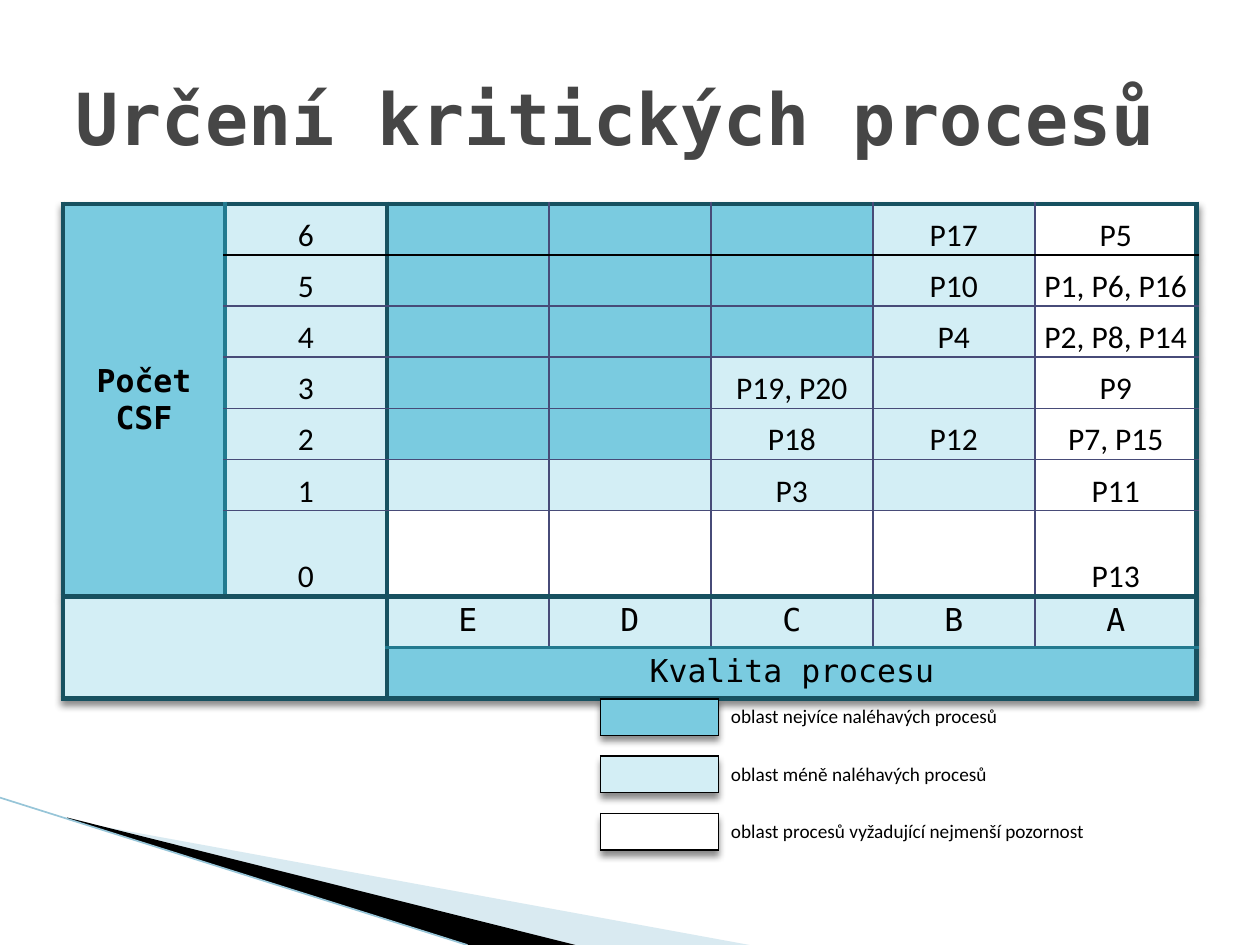
from lxml import etree
from pptx import Presentation
from pptx.dml.color import RGBColor
from pptx.enum.shapes import MSO_CONNECTOR
from pptx.enum.text import MSO_ANCHOR, MSO_AUTO_SIZE, PP_ALIGN
from pptx.oxml import parse_xml
from pptx.oxml.ns import nsdecls, qn
from pptx.util import Cm, Pt

STRAIGHT = MSO_CONNECTOR.STRAIGHT
TOP, MIDDLE, BOTTOM = MSO_ANCHOR.TOP, MSO_ANCHOR.MIDDLE, MSO_ANCHOR.BOTTOM
LEFT, CENTER = PP_ALIGN.LEFT, PP_ALIGN.CENTER
NO_AUTOFIT = MSO_AUTO_SIZE.NONE

BLACK = RGBColor(0x00, 0x00, 0x00)
WHITE = RGBColor(0xFF, 0xFF, 0xFF)
TITLE_GREY = RGBColor(0x46, 0x46, 0x46)
URGENT = RGBColor(0x7A, 0xCB, 0xE0)
LESS_URGENT = RGBColor(0xD3, 0xEE, 0xF5)
DARK_TEAL = RGBColor(0x17, 0x51, 0x60)
TEAL = RGBColor(0x22, 0x7A, 0x8F)
INDIGO = RGBColor(0x47, 0x4B, 0x78)
PALE_BLUE = RGBColor(0xA0, 0xCB, 0xDC)
EDGE_BLUE = RGBColor(0x97, 0xC5, 0xD8)

BODY_FONT, MONO_FONT = "Calibri", "DejaVu Sans Mono"
PLAIN_TABLE_STYLE = "{2D5ABB26-0587-4C30-8999-92F81FD0307C}"

# Border kinds: colour and width in points
FRAME, HEADER, GRID, THIN_BLACK = (DARK_TEAL, 3), (TEAL, 2.25), (INDIGO, 1), (BLACK, 1)

# Matrix: CSF count, urgency zone of each column E to A, processes in each column
ZONES = {"U": URGENT, "L": LESS_URGENT, "W": WHITE}
MATRIX = [
    ("6", "UUULW", ["", "", "", "P17", "P5"]),
    ("5", "UUULW", ["", "", "", "P10", "P1, P6, P16"]),
    ("4", "UUULW", ["", "", "", "P4", "P2, P8, P14"]),
    ("3", "UULLW", ["", "", "P19, P20", "", "P9"]),
    ("2", "UULLW", ["", "", "P18", "P12", "P7, P15"]),
    ("1", "LLLLW", ["", "", "P3", "", "P11"]),
    ("0", "WWWWW", ["", "", "", "", "P13"]),
]
ROW_EDGES = [FRAME, THIN_BLACK] + [GRID] * 5 + [FRAME, HEADER, FRAME]
COLUMN_EDGES = [FRAME, HEADER, FRAME] + [GRID] * 4 + [FRAME]

LEGEND = [
    (URGENT, "oblast nejvíce naléhavých procesů"),
    (LESS_URGENT, "oblast méně naléhavých procesů"),
    (WHITE, "oblast procesů vyžadující nejmenší pozornost"),
]


class SlideBuilder:
    """Holds the style and the current slide."""

    def __init__(self, slide):
        self.slide = slide
        self.shapes = slide.shapes

    def format_text(self, frame, size, font, color=BLACK, bold=False, align=LEFT):
        for paragraph in frame.paragraphs:
            paragraph.alignment = align
            for run in paragraph.runs:
                run.font.size = Pt(size)
                run.font.name = font
                run.font.bold = bold
                run.font.color.rgb = color

    def title(self, text, left, top, width, height):
        heading = self.shapes.title
        heading.left, heading.top = Cm(left), Cm(top)
        heading.width, heading.height = Cm(width), Cm(height)
        frame = heading.text_frame
        frame.text = text
        frame.word_wrap = True
        frame.auto_size = NO_AUTOFIT
        frame.vertical_anchor = MIDDLE
        self.format_text(frame, 41, MONO_FONT, TITLE_GREY, bold=True)

    def wedge(self, corners, color, opacity=100):
        points = [(Cm(x), Cm(y)) for x, y in corners]
        builder = self.shapes.build_freeform(*points[0])
        builder.add_line_segments(points[1:], close=True)
        wedge = builder.convert_to_shape()
        wedge.shadow.inherit = False
        wedge.fill.solid()
        wedge.fill.fore_color.rgb = color
        wedge.line.fill.background()
        if opacity < 100:
            tint = wedge.fill._xPr.find(".//" + qn("a:srgbClr"))
            etree.SubElement(tint, qn("a:alpha"), val=str(opacity * 1000))

    def line(self, start, end, color, width):
        edge = self.shapes.add_connector(STRAIGHT, *map(Cm, start + end))
        edge.line.color.rgb = color
        edge.line.width = Pt(width)
        etree.SubElement(edge._element.spPr, qn("a:effectLst"))

    def table(self, left, top, widths, heights):
        frame = self.shapes.add_table(len(heights), len(widths), Cm(left), Cm(top),
                                      Cm(sum(widths)), Cm(sum(heights)))
        table = frame.table
        table.first_row = table.horz_banding = False
        for column, width in zip(table.columns, widths):
            column.width = Cm(width)
        for row, height in zip(table.rows, heights):
            row.height = Cm(height)
        properties = table._tbl.tblPr
        properties.find(qn("a:tableStyleId")).text = PLAIN_TABLE_STYLE
        properties.insert(0, parse_xml(
            f'<a:effectLst {nsdecls("a")}><a:outerShdw blurRad="50800" dist="38100" '
            'dir="5400000" rotWithShape="0"><a:srgbClr val="000000">'
            '<a:alpha val="45000"/></a:srgbClr></a:outerShdw></a:effectLst>'))
        return table

    def cell(self, cell, text="", fill=None, anchor=TOP, size=18, font=BODY_FONT,
             bold=False, align=CENTER, tight=False):
        cell.vertical_anchor = anchor
        if fill is not None:
            cell.fill.solid()
            cell.fill.fore_color.rgb = fill
        if tight:
            cell.margin_left = cell.margin_right = cell.margin_top = Cm(0.03)
            cell.margin_bottom = 0
        if text:
            cell.text_frame.text = text
            self.format_text(cell.text_frame, size, font, bold=bold, align=align)
        else:
            etree.SubElement(cell.text_frame.paragraphs[0]._p, qn("a:endParaRPr"),
                             sz=str(size * 100))

    def borders(self, cell, left, right, top, bottom):
        properties = cell._tc.get_or_add_tcPr()
        sides = zip(("lnL", "lnR", "lnT", "lnB"), (left, right, top, bottom))
        for position, (side, (color, width)) in enumerate(sides):
            properties.insert(position, parse_xml(
                f'<a:{side} {nsdecls("a")} w="{Pt(width)}"><a:solidFill>'
                f'<a:srgbClr val="{color}"/></a:solidFill></a:{side}>'))


def add_matrix(builder):
    heights = [1.03] * 6 + [1.73] + [1.03] * 2
    table = builder.table(1.27, 4.11, [22.86 / 7] * 7, heights)
    # Merged headings
    table.cell(0, 0).merge(table.cell(6, 0))
    table.cell(7, 0).merge(table.cell(8, 1))
    table.cell(8, 2).merge(table.cell(8, 6))
    builder.cell(table.cell(0, 0), "Počet CSF", URGENT, MIDDLE, font=MONO_FONT, bold=True)
    builder.cell(table.cell(7, 0), fill=LESS_URGENT)
    builder.cell(table.cell(8, 2), "Kvalita procesu", URGENT, font=MONO_FONT)
    # Processes by CSF count and quality
    for row, (count, zones, processes) in enumerate(MATRIX):
        builder.cell(table.cell(row, 1), count, LESS_URGENT, BOTTOM, tight=True)
        for column, (zone, process) in enumerate(zip(zones, processes), 2):
            builder.cell(table.cell(row, column), process, ZONES[zone], BOTTOM,
                         tight=bool(process))
    for column, grade in enumerate("EDCBA", 2):
        builder.cell(table.cell(7, column), grade, LESS_URGENT, font=MONO_FONT)
    # Each cell takes the border kind of the grid edges around it
    for row in range(len(heights)):
        for column in range(7):
            cell = table.cell(row, column)
            if not cell.is_spanned:
                builder.borders(cell, COLUMN_EDGES[column],
                                COLUMN_EDGES[column + cell.span_width],
                                ROW_EDGES[row], ROW_EDGES[row + cell.span_height])


def add_legend(builder):
    table = builder.table(12.11, 14.09, [2.37, 7.95], [0.73, 0.42, 0.73, 0.42, 0.73])
    for index, (color, meaning) in enumerate(LEGEND):
        swatch = table.cell(2 * index, 0)
        builder.cell(swatch, fill=color, size=11)
        builder.borders(swatch, *[THIN_BLACK] * 4)
        builder.cell(table.cell(2 * index, 1), meaning, size=11, align=LEFT)
    for row in (1, 3):
        for column in (0, 1):
            gap = table.cell(row, column)
            builder.cell(gap, size=8)
            gap.margin_top = gap.margin_bottom = 0


def main():
    presentation = Presentation()
    presentation.slide_width, presentation.slide_height = Cm(25.4), Cm(19.05)
    builder = SlideBuilder(presentation.slides.add_slide(presentation.slide_layouts[5]))

    # Corner decoration
    builder.wedge([(1.4, 16.54), (15.11, 19.05), (11.58, 19.05), (1.4, 16.51)], PALE_BLUE, 40)
    builder.wedge([(1.35, 16.48), (11.6, 19.05), (9.45, 19.05), (1.37, 16.51)], BLACK)
    builder.line((0, 16.08), (9.42, 19.05), EDGE_BLUE, 0.95)

    builder.title("Určení kritických procesů", 1.27, 0.76, 22.86, 3.18)
    add_matrix(builder)
    add_legend(builder)
    presentation.save("out.pptx")


if __name__ == "__main__":
    main()
